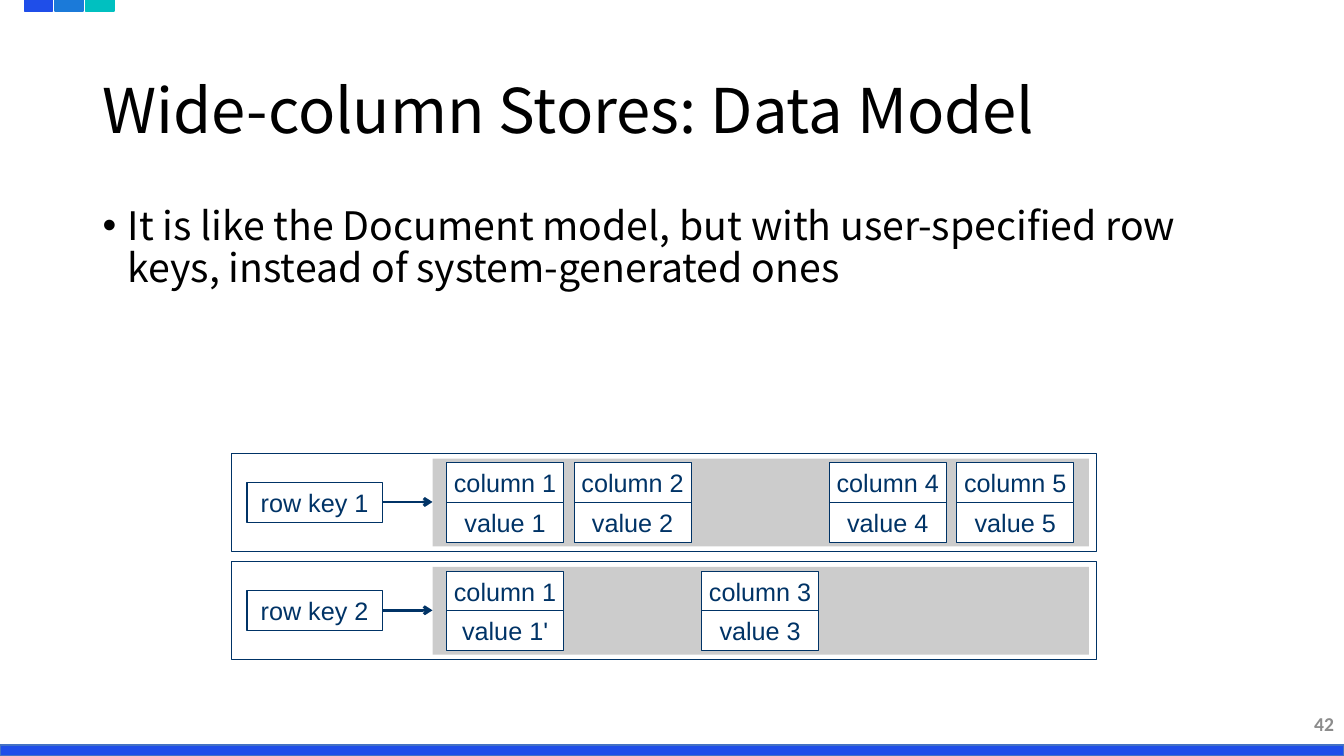
from dataclasses import dataclass

from lxml import etree
from pptx import Presentation
from pptx.dml.color import RGBColor
from pptx.enum.shapes import MSO_CONNECTOR, MSO_SHAPE
from pptx.enum.text import MSO_ANCHOR, PP_ALIGN
from pptx.oxml.ns import qn
from pptx.util import Inches, Pt

RECTANGLE = MSO_SHAPE.RECTANGLE
STRAIGHT = MSO_CONNECTOR.STRAIGHT
TOP, MIDDLE = MSO_ANCHOR.TOP, MSO_ANCHOR.MIDDLE
LEFT, CENTER, RIGHT = PP_ALIGN.LEFT, PP_ALIGN.CENTER, PP_ALIGN.RIGHT

BLACK = RGBColor(0x00, 0x00, 0x00)
WHITE = RGBColor(0xFF, 0xFF, 0xFF)
NAVY = RGBColor(0x00, 0x33, 0x66)
SILVER = RGBColor(0xCC, 0xCC, 0xCC)
GRAY = RGBColor(0x8C, 0x8C, 0x8C)
ROYAL = RGBColor(0x1F, 0x4E, 0xE9)
STEEL = RGBColor(0x44, 0x72, 0xC4)
AZURE = RGBColor(0x1B, 0x7A, 0xD9)
TEAL = RGBColor(0x00, 0xC0, 0xC0)

TITLE_FORMAT = {"name": "Noto Sans CJK KR", "size": Pt(44), "color": BLACK}
BODY_FORMAT = {"name": "Noto Sans CJK KR", "size": Pt(28), "color": BLACK}
NUMBER_FORMAT = {"name": "Calibri", "size": Pt(14), "bold": True, "color": GRAY}
CELL_FORMAT = {"name": "Arial", "size": Pt(18), "color": NAVY}

ROW_TOP, ROW_PITCH = 4.5, 1.075
CELL_LEFT, CELL_PITCH = 4.43, 1.265
CELL_WIDTH, CELL_HEIGHT = 1.16, 0.395


@dataclass
class Area:
    left: float
    top: float
    width: float
    height: float

    def lengths(self) -> list:
        return [Inches(n) for n in (self.left, self.top, self.width, self.height)]


@dataclass
class StoreRow:
    key: str
    values: dict[int, str]


ROWS = [
    StoreRow("row key 1", {n: f"value {n}" for n in (1, 2, 4, 5)}),
    StoreRow("row key 2", {1: "value 1'", 3: "value 3"}),
]


def write_text(shape, text: str, style: dict, align, anchor, wrap: bool = True):
    frame = shape.text_frame
    frame.word_wrap = wrap
    frame.vertical_anchor = anchor
    para = frame.paragraphs[0]
    para.alignment = align
    span = para.add_run()
    span.text = text
    for name, value in style.items():
        if name == "color":
            span.font.color.rgb = value
        else:
            setattr(span.font, name, value)
    return para


def add_text(page, area: Area, text: str, style: dict, align, anchor):
    box = page.shapes.add_textbox(*area.lengths())
    return write_text(box, text, style, align, anchor)


def add_box(page, area: Area, fill=None, line=None, weight: float = 0):
    box = page.shapes.add_shape(RECTANGLE, *area.lengths())
    box.shadow.inherit = False
    if fill is None:
        box.fill.background()
    else:
        box.fill.solid()
        box.fill.fore_color.rgb = fill
    if line is None:
        box.line.fill.background()
    else:
        box.line.color.rgb = line
        box.line.width = Pt(weight)
    return box


def add_label(page, area: Area, text: str, fill=None) -> None:
    box = add_box(page, area, fill, NAVY)
    write_text(box, text, CELL_FORMAT, CENTER, MIDDLE, wrap=False)


def add_arrow(page, start: float, end: float, height: float) -> None:
    arrow = page.shapes.add_connector(
        STRAIGHT, Inches(start), Inches(height), Inches(end), Inches(height))
    arrow.line.color.rgb = NAVY
    arrow.line.width = Pt(0)
    line = arrow.line._get_or_add_ln()
    etree.SubElement(line, qn("a:tailEnd"), type="arrow")
    etree.SubElement(arrow._element.spPr, qn("a:effectLst"))


def add_bullet(para) -> None:
    properties = para._p.get_or_add_pPr()
    properties.set("marL", str(Inches(0.25)))
    properties.set("indent", str(Inches(-0.25)))
    etree.SubElement(properties, qn("a:buFont"), typeface="Arial")
    etree.SubElement(properties, qn("a:buChar"), char="•")


def add_store_row(page, row: StoreRow, top: float) -> None:
    add_box(page, Area(2.3, top, 8.58, 0.97), WHITE, NAVY)
    add_label(page, Area(2.45, top + 0.285, 1.34, CELL_HEIGHT), row.key)
    add_box(page, Area(4.29, top + 0.05, 6.51, 0.87), SILVER)
    add_arrow(page, 3.79, 4.29, top + 0.48)
    for number, value in row.values.items():
        left = CELL_LEFT + (number - 1) * CELL_PITCH
        for level, text in enumerate((f"column {number}", value)):
            cell_top = top + 0.09 + level * CELL_HEIGHT
            add_label(page, Area(left, cell_top, CELL_WIDTH, CELL_HEIGHT), text, WHITE)


def main() -> None:
    deck = Presentation()
    deck.slide_width, deck.slide_height = Inches(13.33), Inches(7.5)
    page = deck.slides.add_slide(deck.slide_layouts[6])

    # Bottom bar and top tabs
    add_box(page, Area(0, 7.39, 13.33, 0.11), ROYAL, STEEL, 1)
    for index, color in enumerate((ROYAL, AZURE, TEAL)):
        add_box(page, Area(0.24 + index * 0.305, 0, 0.28, 0.11), color, color, 1)

    # Title, body and page number
    title = add_text(page, Area(0.92, 0.4, 11.5, 1.45),
                     "Wide-column Stores: Data Model", TITLE_FORMAT, LEFT, MIDDLE)
    body = add_text(page, Area(0.92, 2, 11.5, 4.76),
                    "It is like the Document model, but with user-specified row "
                    "keys, instead of system-generated ones", BODY_FORMAT, LEFT, TOP)
    add_bullet(body)
    for para in (title, body):
        para.line_spacing = 0.9
    add_text(page, Area(10.33, 6.98, 3, 0.4), "42", NUMBER_FORMAT, RIGHT, MIDDLE)

    # Rows of the store
    for index, row in enumerate(ROWS):
        add_store_row(page, row, ROW_TOP + index * ROW_PITCH)

    deck.save("out.pptx")


if __name__ == "__main__":
    main()
